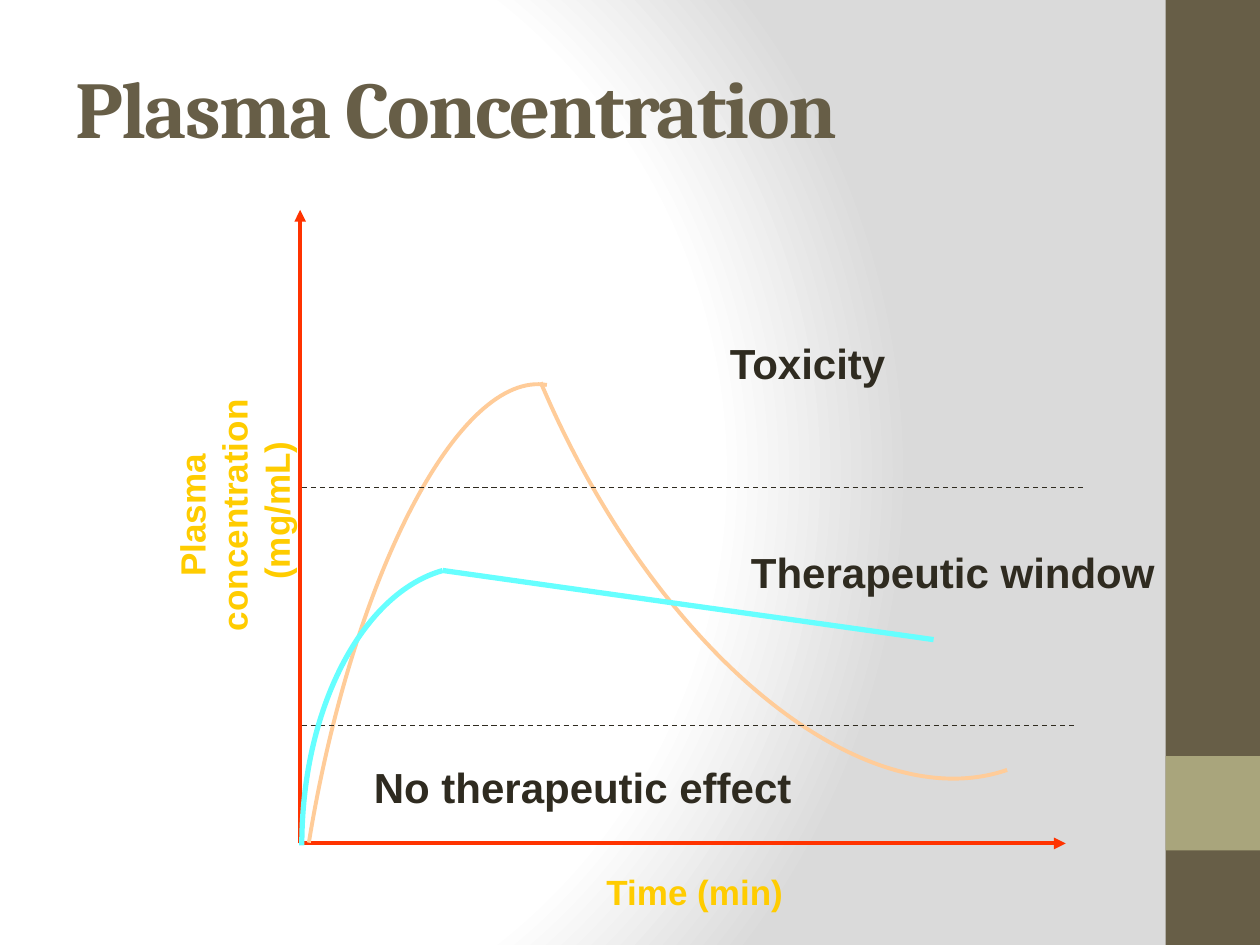
from dataclasses import dataclass

from lxml import etree
from pptx import Presentation
from pptx.dml.color import RGBColor
from pptx.enum import dml, shapes, text
from pptx.oxml import parse_xml
from pptx.oxml.ns import nsdecls, qn
from pptx.util import Pt


@dataclass(frozen=True)
class Theme:
    brown: str = "675E47"
    olive: str = "A9A57C"
    ink: str = "2F2B20"
    axis: str = "FF3300"
    axis_label: str = "FFCC00"
    high_dose: str = "FFCC99"
    safe_dose: str = "66FFFF"
    white: str = "FFFFFF"
    grey: str = "DADADA"
    title_font: str = "Cambria"
    body_font: str = "Arial"
    title_size: float = 46
    zone_size: float = 24
    axis_size: float = 20


THEME = Theme()


def style_font(font, name, size, color):
    font.name, font.size, font.bold = name, Pt(size), True
    font.color.rgb = RGBColor.from_string(color)


def style_line(line, color, width):
    line.color.rgb = RGBColor.from_string(color)
    line.width = Pt(width)


def paint_background(slide):
    slide.background.fill.solid()
    solid = next(slide.element.iter(qn("a:solidFill")))
    stops = "".join(
        f'<a:gs pos="{position * 1000}"><a:srgbClr val="{color}"/></a:gs>'
        for position, color in ((0, THEME.white), (75, THEME.white), (100, THEME.grey)))
    gradient = parse_xml(
        f'<a:gradFill {nsdecls("a")} rotWithShape="1"><a:gsLst>{stops}</a:gsLst>'
        '<a:path path="circle"><a:fillToRect l="20000" t="50000" r="100000" b="50000"/>'
        '</a:path></a:gradFill>')
    solid.getparent().replace(solid, gradient)


def add_sidebar(slide, left, top, width, height):
    """A full-height band with a square accent near its foot."""
    bands = ((top, height, THEME.brown), (top + height * 0.8, width, THEME.olive))
    for band_top, band_height, color in bands:
        band = slide.shapes.add_shape(shapes.MSO_SHAPE.RECTANGLE, Pt(left), Pt(band_top),
                                      Pt(width), Pt(band_height))
        band.shadow.inherit = False
        band.fill.solid()
        band.fill.fore_color.rgb = RGBColor.from_string(color)
        band.line.fill.background()


def fill_title(slide, left, top, width, height, wording):
    title = slide.shapes.title
    title.left, title.top, title.width, title.height = map(Pt, (left, top, width, height))
    frame = title.text_frame
    frame.text = wording
    frame.vertical_anchor = text.MSO_ANCHOR.MIDDLE
    paragraph = frame.paragraphs[0]
    paragraph.alignment = text.PP_ALIGN.LEFT
    style_font(paragraph.font, THEME.title_font, THEME.title_size, THEME.brown)
    paragraph.runs[0].font._element.set("spc", "-100")


def add_label(slide, left, top, width, height, wording, size, color, wrap=False):
    label = slide.shapes.add_textbox(Pt(left), Pt(top), Pt(width), Pt(height))
    frame = label.text_frame
    frame.word_wrap = wrap
    frame.text = wording
    for paragraph in frame.paragraphs:
        paragraph.alignment = text.PP_ALIGN.CENTER
        style_font(paragraph.font, THEME.body_font, size, color)
    return label


def add_straight(slide, start, end, color, width, arrow=False, dashed=False):
    connector = slide.shapes.add_connector(shapes.MSO_CONNECTOR.STRAIGHT,
                                           *map(Pt, (*start, *end)))
    style_line(connector.line, color, width)
    if dashed:
        connector.line.dash_style = dml.MSO_LINE.DASH
    if arrow:
        line = connector.line._get_or_add_ln()
        etree.SubElement(line, qn("a:tailEnd"), type="triangle")
    etree.SubElement(connector.element.spPr, qn("a:effectLst"))


def add_curve(slide, points, color, width):
    """Draw one cubic curve from a start, two control points and an end."""
    start, *others = [tuple(map(Pt, point)) for point in points]
    builder = slide.shapes.build_freeform(*start)
    builder.add_line_segments(others, close=False)
    curve = builder.convert_to_shape()
    path = next(curve.element.iter(qn("a:path")))
    bezier = etree.Element(qn("a:cubicBezTo"))
    for segment in path.findall(qn("a:lnTo")):
        bezier.append(segment[0])
        path.remove(segment)
    path.append(bezier)
    curve.shadow.inherit = False
    curve.fill.background()
    style_line(curve.line, color, width)


def add_concentration_graph(slide, left, top, width, height):
    """Axes, dose curves and zones; left and bottom edges are the axes."""
    def at(x, y):
        return left + x, top + y

    origin = at(0, height)
    for end in (at(0, 0), at(width, height)):
        add_straight(slide, origin, end, THEME.axis, 2.25, arrow=True)

    high_dose_curves = (
        ((141, 100), (91, 91.5), (30, 209), (5, 361.5)),
        ((404, 320), (320.5, 348.5), (202.5, 251.5), (137.5, 98.5)))
    for points in high_dose_curves:
        add_curve(slide, [at(*point) for point in points], THEME.high_dose, 2.25)

    y_label = add_label(slide, *at(-113.5, 135), 151, 79,
                        "Plasma concentration\n (mg/mL)",
                        THEME.axis_size, THEME.axis_label, wrap=True)
    y_label.rotation = 270
    add_label(slide, *at(160.5, 374), 130, 32, "Time (min)",
              THEME.axis_size, THEME.axis_label)

    for y, right in ((158.5, 449), (294.5, 443)):
        add_straight(slide, at(1, y), at(right, y), THEME.ink, 0.75, dashed=True)

    zones = (("Therapeutic window", 245.5, 189, 255), ("Toxicity", 232.5, 69.5, 115),
             ("No therapeutic effect", 30, 311.5, 263))
    for wording, x, y, label_width in zones:
        add_label(slide, *at(x, y), label_width, 36, wording, THEME.zone_size, THEME.ink)

    peak = at(81.5, 206)
    rise = [peak, at(35.5, 219), at(1, 285), at(1, 363)]
    add_curve(slide, rise, THEME.safe_dose, 3)
    add_straight(slide, peak, at(362, 245.5), THEME.safe_dose, 3)


def main():
    presentation = Presentation()
    presentation.slide_width, presentation.slide_height = Pt(720), Pt(540)
    slide = presentation.slides.add_slide(presentation.slide_layouts[5])
    paint_background(slide)
    add_sidebar(slide, 666, 0, 54, 540)
    fill_title(slide, 36, 16, 648, 90, "Plasma Concentration")
    add_concentration_graph(slide, 171.5, 120, 437.5, 362)
    presentation.save("out.pptx")


if __name__ == "__main__":
    main()
